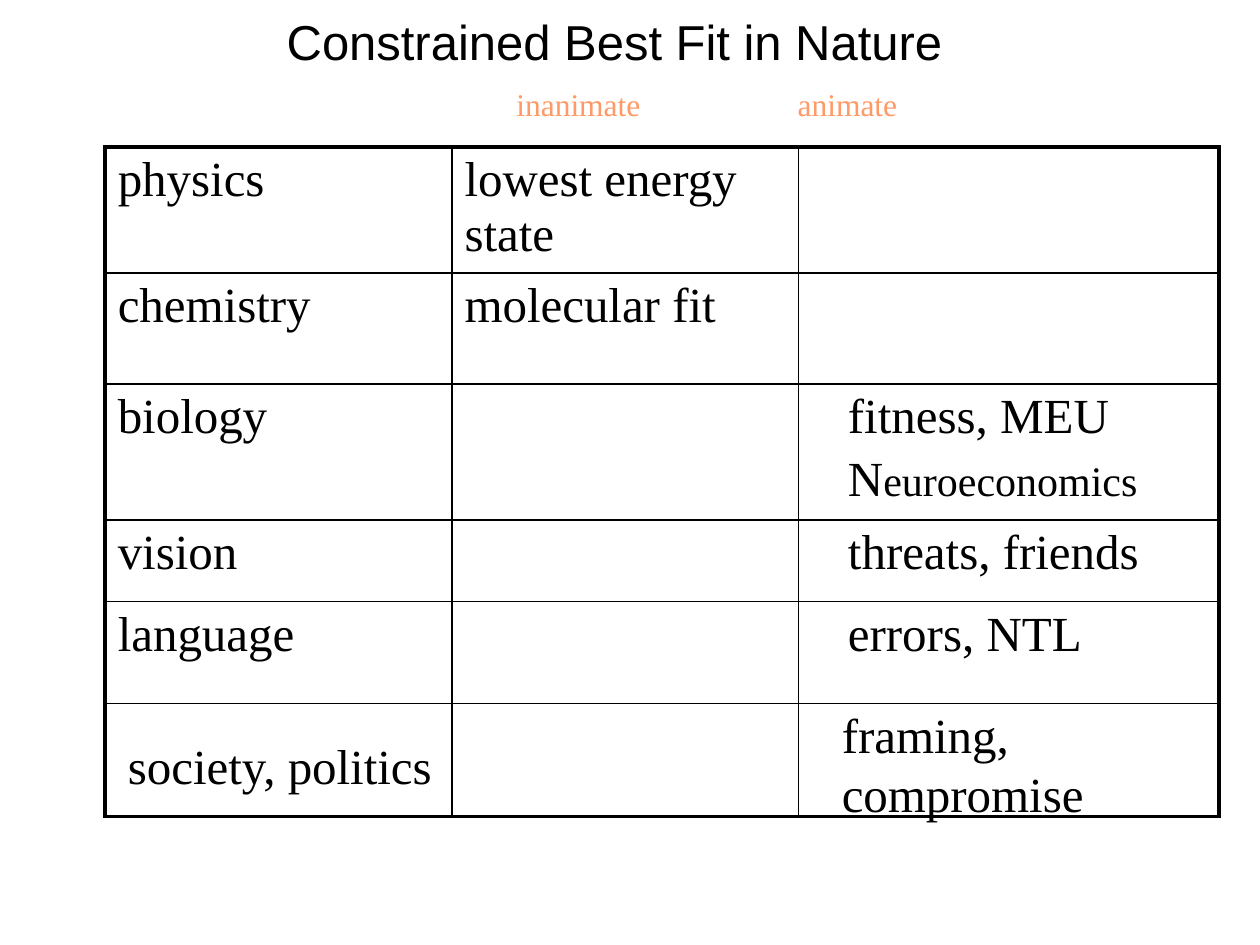
from dataclasses import dataclass

from lxml.etree import SubElement
from pptx import Presentation
from pptx.dml.color import RGBColor as RGB
from pptx.enum.shapes import MSO_CONNECTOR as Conn
from pptx.enum.text import MSO_ANCHOR as Anchor, MSO_AUTO_SIZE as AutoSize, PP_ALIGN as Align
from pptx.oxml.ns import qn
from pptx.util import Cm, Pt


@dataclass(frozen=True)
class Theme:
    ink: RGB = RGB(0, 0, 0)
    accent: RGB = RGB(0xFF, 0x99, 0x66)
    title_font: str = "Arial"
    body_font: str = "Times New Roman"
    large: float = 28
    medium: float = 24
    small: float = 18
    frame: float = 2.25
    rule: float = 1
    divider: float = 0.75


@dataclass(frozen=True)
class Run:
    text: str
    size: float = Theme.large
    color: RGB = Theme.ink
    font: str = Theme.body_font


@dataclass(frozen=True)
class Box:
    left: float
    top: float
    width: float
    height: float


@dataclass(frozen=True)
class Label:
    box: Box
    run: Run
    tab: float = 0


Paragraphs = list[list[Run]]

T = Theme()
TABLE = Box(2.12, 2.96, 22.45, 13.5)
COLUMNS = [6.99, 6.99, 8.47]
ROWS = [2.54, 2.24, 2.74, 1.65, 4.33]
INDENT = 0.74  # the last column's text is set in from its border

# Field, inanimate example, animate example
FIELDS: list[list[Paragraphs]] = [
    [[[Run("physics")]], [[Run("lowest energy state")]], []],
    [[[Run("chemistry")]], [[Run("molecular fit")]], []],
    [[[Run("biology")]], [],
     [[Run("fitness, MEU")], [Run("N"), Run("euroeconomics", T.medium)]]],
    [[[Run("vision")]], [], [[Run("threats, friends")]]],
    [[[Run("language")]], [], [[Run("errors, NTL")]]],
]

TITLE = Label(Box(2.12, 0, 20.53, 1.44),
              Run("Constrained Best Fit in Nature", font=T.title_font))
LABELS = [
    Label(Box(10.16, 1.48, 11.85, 1.27),
          Run("inanimate\tanimate", T.small, T.accent), tab=5.67),
    Label(Box(2.33, 14.6, 6.99, 1.44), Run("society, politics")),
    Label(Box(16.72, 13.97, 8.26, 2.61), Run("framing, compromise")),
]


def place(box: Box) -> tuple:
    return Cm(box.left), Cm(box.top), Cm(box.width), Cm(box.height)


def add_run(p, run: Run) -> None:
    r = p.add_run()
    r.text = run.text
    r.font.size, r.font.name = Pt(run.size), run.font
    r.font.color.rgb = run.color


def fill_frame(tf, label: Label, align=Align.LEFT) -> None:
    tf.word_wrap = True
    tf.auto_size = AutoSize.NONE
    tf.vertical_anchor = Anchor.TOP
    tf.margin_top = Cm(0.23)
    p = tf.paragraphs[0]
    p.alignment = align
    if label.tab:
        tabs = SubElement(p._p.get_or_add_pPr(), qn("a:tabLst"))
        SubElement(tabs, qn("a:tab"), pos=str(Cm(label.tab)), algn="l")
    add_run(p, label.run)


def add_label(slide, label: Label) -> None:
    fill_frame(slide.shapes.add_textbox(*place(label.box)).text_frame, label)


def set_border(cell, side: str, width: float) -> None:
    ln = SubElement(cell._tc.get_or_add_tcPr(), qn(f"a:ln{side}"), w=str(Pt(width)))
    fill = SubElement(ln, qn("a:solidFill"))
    SubElement(fill, qn("a:srgbClr"), val=str(T.ink))


def fill_cell(cell, paragraphs: Paragraphs, indent: float) -> None:
    tf = cell.text_frame
    for i, runs in enumerate(paragraphs):
        p = tf.add_paragraph() if i else tf.paragraphs[0]
        if i:
            p.space_before = Pt(5)
        if indent:
            p._p.get_or_add_pPr().set("marL", str(Cm(indent)))
        for run in runs:
            add_run(p, run)


def add_fields_table(slide) -> None:
    table = slide.shapes.add_table(len(ROWS), len(COLUMNS), *place(TABLE)).table
    table.first_row = table.horz_banding = False
    for column, width in zip(table.columns, COLUMNS):
        column.width = Cm(width)
    for row, height in zip(table.rows, ROWS):
        row.height = Cm(height)

    last_row, last_col = len(ROWS) - 1, len(COLUMNS) - 1
    for i, row in enumerate(FIELDS):
        for j, paragraphs in enumerate(row):
            cell = table.cell(i, j)
            outer = {"L": j == 0, "R": j == last_col, "T": i == 0, "B": i == last_row}
            for side, on_frame in outer.items():
                set_border(cell, side, T.frame if on_frame else T.rule)
            cell.fill.background()
            fill_cell(cell, paragraphs, INDENT if j == last_col else 0)


def add_divider(slide, y: float) -> None:
    right = TABLE.left + TABLE.width
    line = slide.shapes.add_connector(Conn.STRAIGHT, Cm(TABLE.left), Cm(y), Cm(right), Cm(y))
    line.line.color.rgb = T.ink
    line.line.width = Pt(T.divider)
    SubElement(line._element.spPr, qn("a:effectLst"))


def main() -> None:
    prs = Presentation()
    prs.slide_width, prs.slide_height = Cm(25.4), Cm(19.05)
    s = prs.slides.add_slide(prs.slide_layouts[5])

    # Title
    title = s.shapes.title
    title.left, title.top, title.width, title.height = place(TITLE.box)
    fill_frame(title.text_frame, TITLE, Align.CENTER)

    # Table, with a line splitting its last row
    add_fields_table(s)
    add_divider(s, 14.18)

    # Column headings and the entries below the line
    for label in LABELS:
        add_label(s, label)

    prs.save("out.pptx")


if __name__ == "__main__":
    main()
